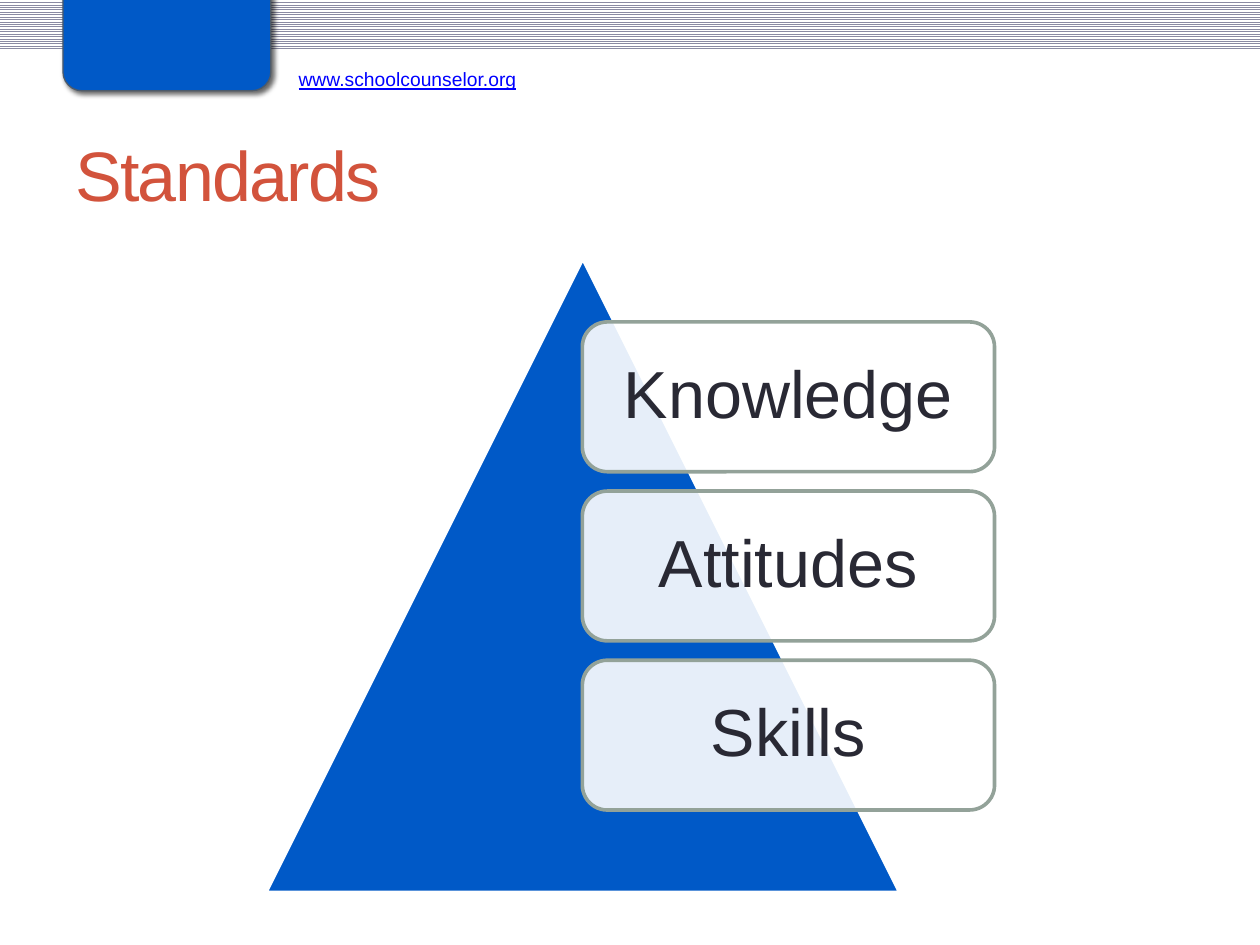
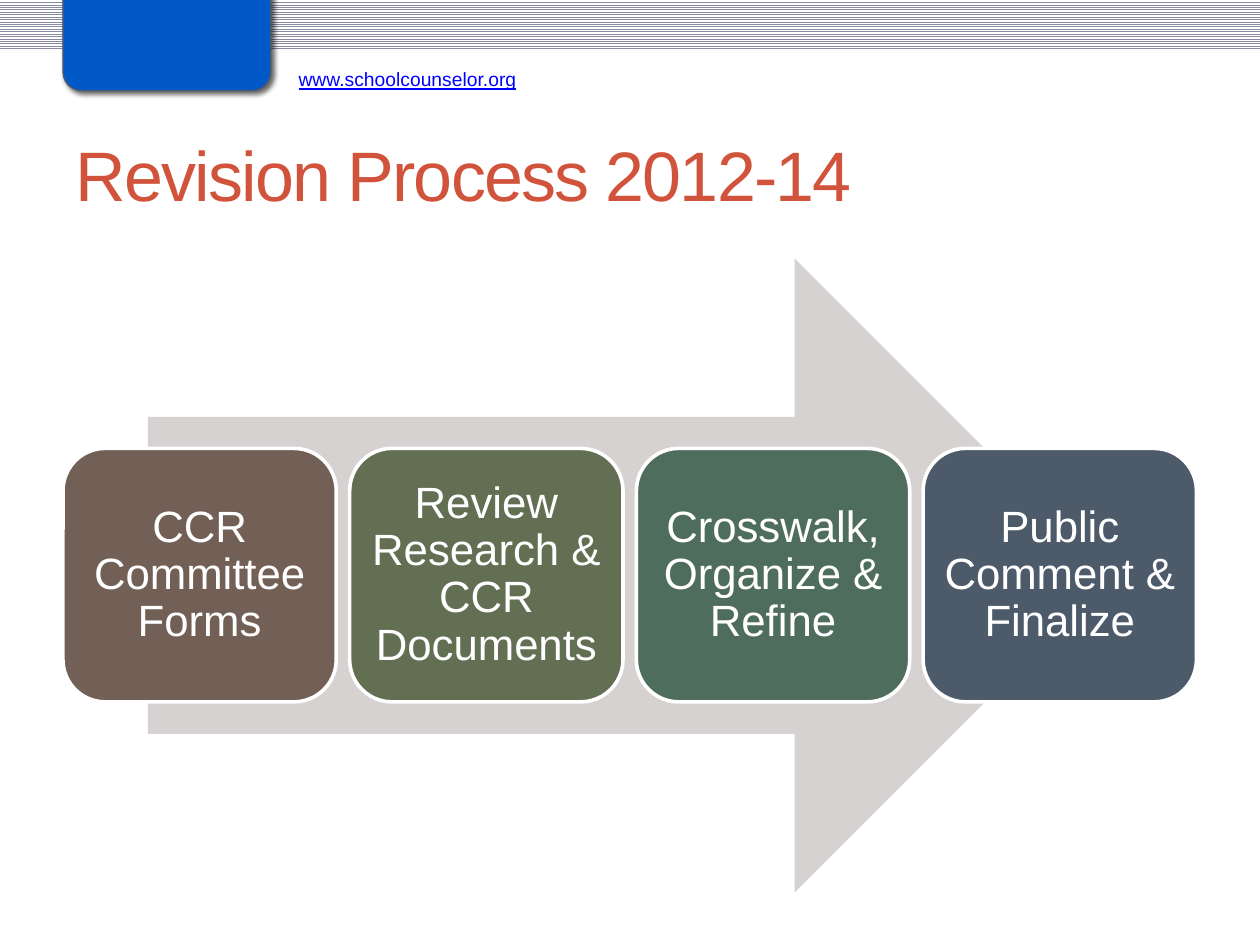
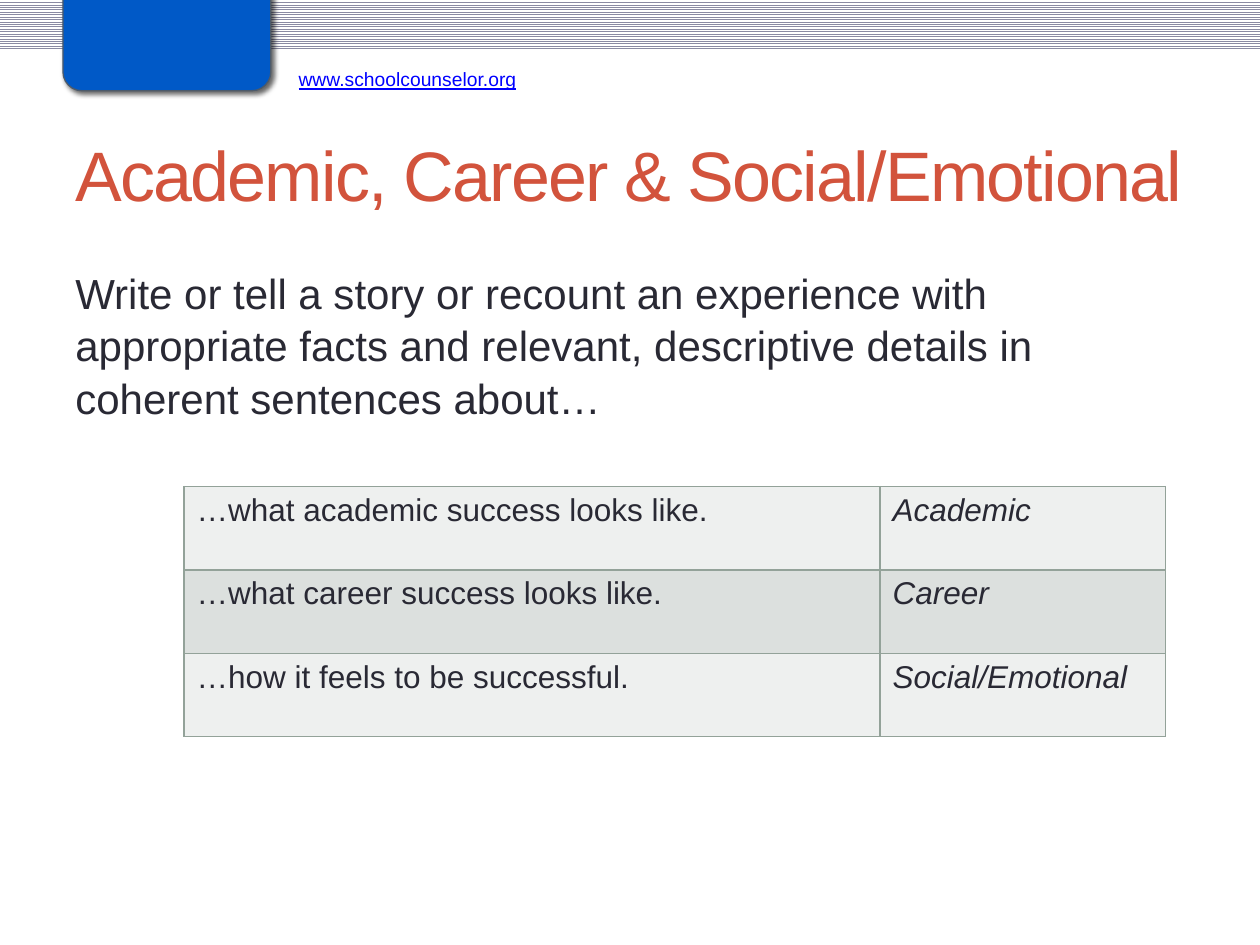
import pptx
import pptx.util
import pptx.dml.color
import pptx.enum.dml
import pptx.enum.shapes
import pptx.enum.text
import pptx.oxml
import pptx.oxml.ns

Cm = pptx.util.Cm
Pt = pptx.util.Pt
RGBColor = pptx.dml.color.RGBColor
KIND = pptx.enum.shapes.MSO_SHAPE
ALIGN = pptx.enum.text.PP_ALIGN
ANCHOR = pptx.enum.text.MSO_ANCHOR
qn = pptx.oxml.ns.qn
NS = pptx.oxml.ns.nsdecls("a")

# Shared style
FONT = "Arial"
WHITE = RGBColor(0xFF, 0xFF, 0xFF)
INK = RGBColor(0x29, 0x29, 0x34)
RED = RGBColor(0xD2, 0x53, 0x3C)
BLUE = RGBColor(0x00, 0x59, 0xC7)
LINK = RGBColor(0x00, 0x00, 0xFF)
STRIPE = RGBColor(0x8A, 0x8A, 0xA3)
SAGE = RGBColor(0x93, 0xA2, 0x99)
SLATE = RGBColor(0x4C, 0x5A, 0x6A)
BROWN = RGBColor(0x72, 0x60, 0x56)
OLIVE = RGBColor(0x63, 0x6F, 0x53)
GREEN = RGBColor(0x4F, 0x6D, 0x5D)
STONE = RGBColor(0xD5, 0xD2, 0xD1)
PALE = RGBColor(0xEE, 0xF0, 0xEF)
MIST = RGBColor(0xDC, 0xE0, 0xDE)
EDGE = 2.08


def write(frame, text, size=18, color=INK, align=ALIGN.LEFT, anchor=ANCHOR.TOP,
          space=None, line=False, slant=False, track=None):
    """Put one formatted paragraph into a text frame."""
    frame.word_wrap = True
    frame.vertical_anchor = anchor
    para = frame.paragraphs[0]
    para.alignment = align
    para.line_spacing = space
    run = para.add_run()
    run.text = text
    font = run.font
    font.name = FONT
    font.size = Pt(size)
    font.color.rgb = color
    font.underline = line
    font.italic = slant
    if track is not None:
        run._r.get_or_add_rPr().set("spc", str(track))


def label(slide, box, text, **style):
    area = slide.shapes.add_textbox(*map(Cm, box))
    write(area.text_frame, text, **style)


def shape(slide, kind, box, fill=None, edge=None, width=EDGE, alpha=None):
    item = slide.shapes.add_shape(kind, *map(Cm, box))
    item.shadow.inherit = False
    if fill is not None:
        item.fill.solid()
        item.fill.fore_color.rgb = fill
    if alpha is not None:
        tint = item._element.spPr.find(qn("a:solidFill"))[0]
        tint.append(pptx.oxml.parse_xml(f'<a:alpha {NS} val="{alpha * 1000}"/>'))
    if edge is None:
        item.line.fill.background()
    else:
        item.line.color.rgb = edge
        item.line.width = Pt(width)
    return item


def card(slide, box, text, size, color, **look):
    item = shape(slide, KIND.ROUNDED_RECTANGLE, box, **look)
    frame = item.text_frame
    frame.margin_left = frame.margin_right = Cm(0.05)
    frame.margin_top = frame.margin_bottom = Cm(0.05)
    write(frame, text, size=size, color=color, align=ALIGN.CENTER,
          anchor=ANCHOR.MIDDLE, space=0.9)


def shade(item):
    """Give a shape a soft shadow to the lower right."""
    glow = item._element.spPr.find(qn("a:effectLst"))
    glow.append(pptx.oxml.parse_xml(
        f'<a:outerShdw {NS} blurRad="{Pt(3)}" dist="{Pt(2)}" dir="2700000">'
        '<a:srgbClr val="000000"><a:alpha val="60000"/></a:srgbClr>'
        '</a:outerShdw>'))


def border(cell):
    props = cell._tc.get_or_add_tcPr()
    for side in ("lnL", "lnR", "lnT", "lnB"):
        props.append(pptx.oxml.parse_xml(
            f'<a:{side} {NS} w="{Pt(1)}"><a:solidFill>'
            f'<a:srgbClr val="{SAGE}"/></a:solidFill></a:{side}>'))


def grid(slide, left, top, wide, high, rows):
    item = slide.shapes.add_table(len(rows), len(wide), Cm(left), Cm(top),
                                  Cm(sum(wide)), Cm(high * len(rows)))
    table = item.table
    table.first_row = table.horz_banding = False
    for col, width in zip(table.columns, wide):
        col.width = Cm(width)
    for r, texts in enumerate(rows):
        table.rows[r].height = Cm(high)
        for c, text in enumerate(texts):
            cell = table.cell(r, c)
            border(cell)
            cell.fill.solid()
            cell.fill.fore_color.rgb = MIST if r % 2 else PALE
            write(cell.text_frame, text, slant=c == 1)


def page(deck, title):
    """Add a slide with the striped band, blue tab, address and title."""
    slide = deck.slides.add_slide(deck.slide_layouts[6])
    band = shape(slide, KIND.RECTANGLE, (0, 0, 25.4, 1.02))
    band.fill.patterned()
    band.fill.pattern = pptx.enum.dml.MSO_PATTERN.NARROW_HORIZONTAL
    band.fill.fore_color.rgb = STRIPE
    band.fill.back_color.rgb = WHITE
    tab = shape(slide, KIND.ROUNDED_RECTANGLE, (1.27, -0.46, 4.19, 2.29),
                fill=BLUE, edge=SLATE, width=0.75)
    shade(tab)
    label(slide, (5.77, 1.24, 5.54, 0.74), "www.schoolcounselor.org",
          size=11, color=LINK, line=True)
    label(slide, (1.27, 2.13, 22.86, 2.74), title, size=40, color=RED,
          anchor=ANCHOR.MIDDLE, track=-100)
    return slide


def goals(deck):
    slide = page(deck, "Standards")
    shape(slide, KIND.ISOSCELES_TRIANGLE, (5.36, 5.21, 12.78, 12.78),
          fill=BLUE, edge=WHITE)
    for i, text in enumerate(("Knowledge", "Attitudes", "Skills")):
        card(slide, (11.74, 6.49 + 3.41 * i, 8.31, 3.02), text, 38, INK,
             fill=WHITE, edge=SAGE, alpha=90)


def steps(deck):
    slide = page(deck, "Revision Process 2012-14")
    shape(slide, KIND.RIGHT_ARROW, (2.98, 5.21, 19.43, 12.78), fill=STONE)
    stages = (("CCR Committee Forms", BROWN),
              ("Review Research & CCR Documents", OLIVE),
              ("Crosswalk, Organize & Refine", GREEN),
              ("Public Comment & Finalize", SLATE))
    for i, (text, fill) in enumerate(stages):
        card(slide, (1.27 + 5.78 * i, 9.04, 5.51, 5.11), text, 25, WHITE,
             fill=fill, edge=WHITE)


def story(deck):
    slide = page(deck, "Academic, Career & Social/Emotional")
    label(slide, (1.27, 5.21, 22.86, 12.78),
          "Write or tell a story or recount an experience with appropriate "
          "facts and relevant, descriptive details in coherent sentences about…",
          size=24, space=1.05)
    grid(slide, 3.71, 9.81, (14.03, 5.76), 1.68,
         (("…what academic success looks like.", "Academic"),
          ("…what career success looks like.", "Career"),
          ("…how it feels to be successful.", "Social/Emotional")))


def main():
    deck = pptx.Presentation()
    deck.slide_width = Cm(25.4)
    deck.slide_height = Cm(19.05)
    goals(deck)
    steps(deck)
    story(deck)
    deck.save("out.pptx")


if __name__ == "__main__":
    main()
